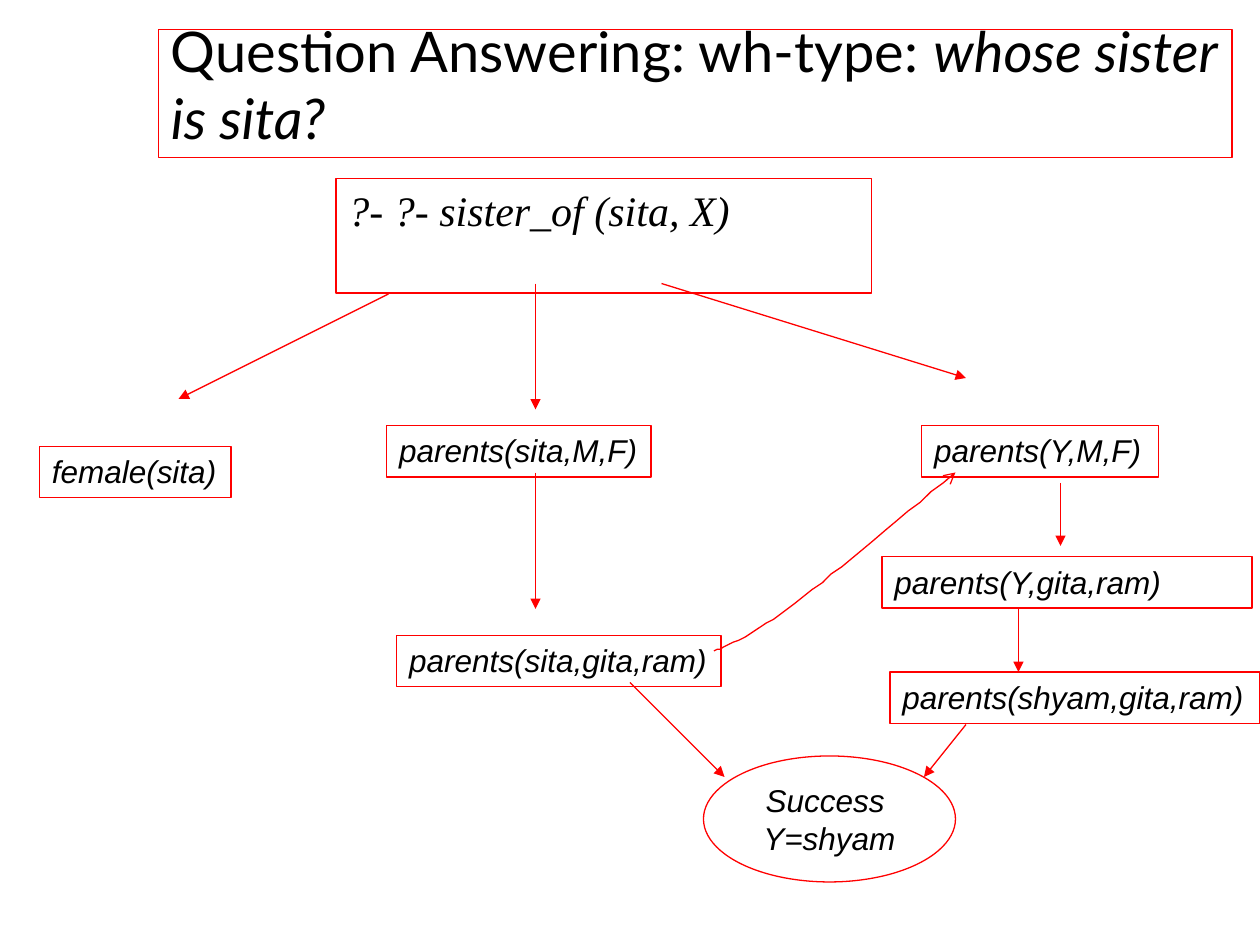
"""Build the slide with the proof tree for a wh-type question."""
from lxml.etree import SubElement
from pptx import Presentation
from pptx.dml.color import RGBColor
from pptx.enum.shapes import MSO_CONNECTOR, MSO_SHAPE
from pptx.enum.text import MSO_ANCHOR, MSO_AUTO_SIZE, PP_ALIGN
from pptx.oxml.ns import qn
from pptx.util import Pt

RED = RGBColor(0xFF, 0x00, 0x00)
BLACK = RGBColor(0x00, 0x00, 0x00)


def outline(item, head=None):
    item.line.color.rgb = RED
    item.line.width = Pt(0.75)
    if head:
        SubElement(item.line._get_or_add_ln(), qn("a:tailEnd"), type=head)


def style(run, **font):
    for key, value in font.items():
        setattr(run.font, key, value)
    run.font.color.rgb = BLACK


deck = Presentation()
deck.slide_width, deck.slide_height = Pt(720), Pt(540)
slide = deck.slides.add_slide(deck.slide_layouts[5])
shapes = slide.shapes

title = shapes.title
place = {"left": 90.5, "top": 16.8, "width": 613.5, "height": 73.2}
for side, length in place.items():
    setattr(title, side, Pt(length))
outline(title)
heading = title.text_frame
heading.auto_size = MSO_AUTO_SIZE.NONE
heading.vertical_anchor = MSO_ANCHOR.BOTTOM
heading.paragraphs[0].alignment = PP_ALIGN.LEFT
for words, slanted in [("Question Answering: wh-type: ", False), ("whose sister is sita?", True)]:
    part = heading.paragraphs[0].add_run()
    part.text = words
    style(part, name="Lato", size=Pt(32), italic=slanted)

goals = [
    ("female(sita)", 22.5, 255, 109.5, 29.5),
    ("parents(sita,M,F)", 221, 243, 151, 29.5),
    ("parents(Y,M,F)", 526.7, 243, 135.3, 29.5),
    ("parents(sita,gita,ram)", 226.7, 363, 185.3, 29.5),
    ("parents(Y,gita,ram)", 504, 318, 211.5, 29.5),
    ("parents(shyam,gita,ram)", 508.5, 384, 211.5, 29.5),
    ("?- ?- sister_of (sita, X)", 192, 102, 306, 65.5),
    ("Success \nY=shyam", 402, 432, 144, 72),
]
for words, *box in goals:
    success = words.startswith("Success")
    query = words.startswith("?-")
    kind = MSO_SHAPE.OVAL if success else MSO_SHAPE.RECTANGLE
    goal = shapes.add_shape(kind, *map(Pt, box))
    goal.shadow.inherit = False
    goal.fill.background()
    outline(goal)
    frame = goal.text_frame
    frame.word_wrap = query
    frame.vertical_anchor = MSO_ANCHOR.MIDDLE if success else MSO_ANCHOR.TOP
    frame.text = words
    for paragraph in frame.paragraphs:
        paragraph.alignment = PP_ALIGN.CENTER if success else PP_ALIGN.LEFT
        if query:
            paragraph.space_before = Pt(4.8)
        style(paragraph.runs[0], name="Times New Roman" if query else "Arial",
              size=Pt(24 if query else 18), italic=True)

steps = [
    (222, 168, 102, 228),
    (306, 162, 306, 234),
    (378, 162, 552, 216),
    (306, 270, 306, 348),
    (606, 276, 606, 312),
    (360, 390, 414, 444),
    (552, 414, 528, 444),
    (582, 348, 582, 384),
]
for ends in steps:
    step = shapes.add_connector(MSO_CONNECTOR.STRAIGHT, *map(Pt, ends))
    outline(step, "triangle")
    SubElement(step._element.spPr, qn("a:effectLst"))

bends = [
    [(408, 372), (417.5, 368.5), (427, 365), (450, 348)],
    [(450, 348), (473, 331), (510, 300), (546, 270)],
]
points = []
for bend in bends:
    for t in [n / 16 for n in range(1, 17)]:
        weights = [(1 - t) ** 3, 3 * t * (1 - t) ** 2, 3 * t * t * (1 - t), t ** 3]
        points.append(tuple(sum(w * c for w, c in zip(weights, axis)) for axis in zip(*bend)))
pen = shapes.build_freeform(*bends[0][0], scale=Pt(1))
pen.add_line_segments(points, close=False)
binding = pen.convert_to_shape()
binding.shadow.inherit = False
binding.fill.background()
outline(binding, "arrow")

deck.save("out.pptx")
